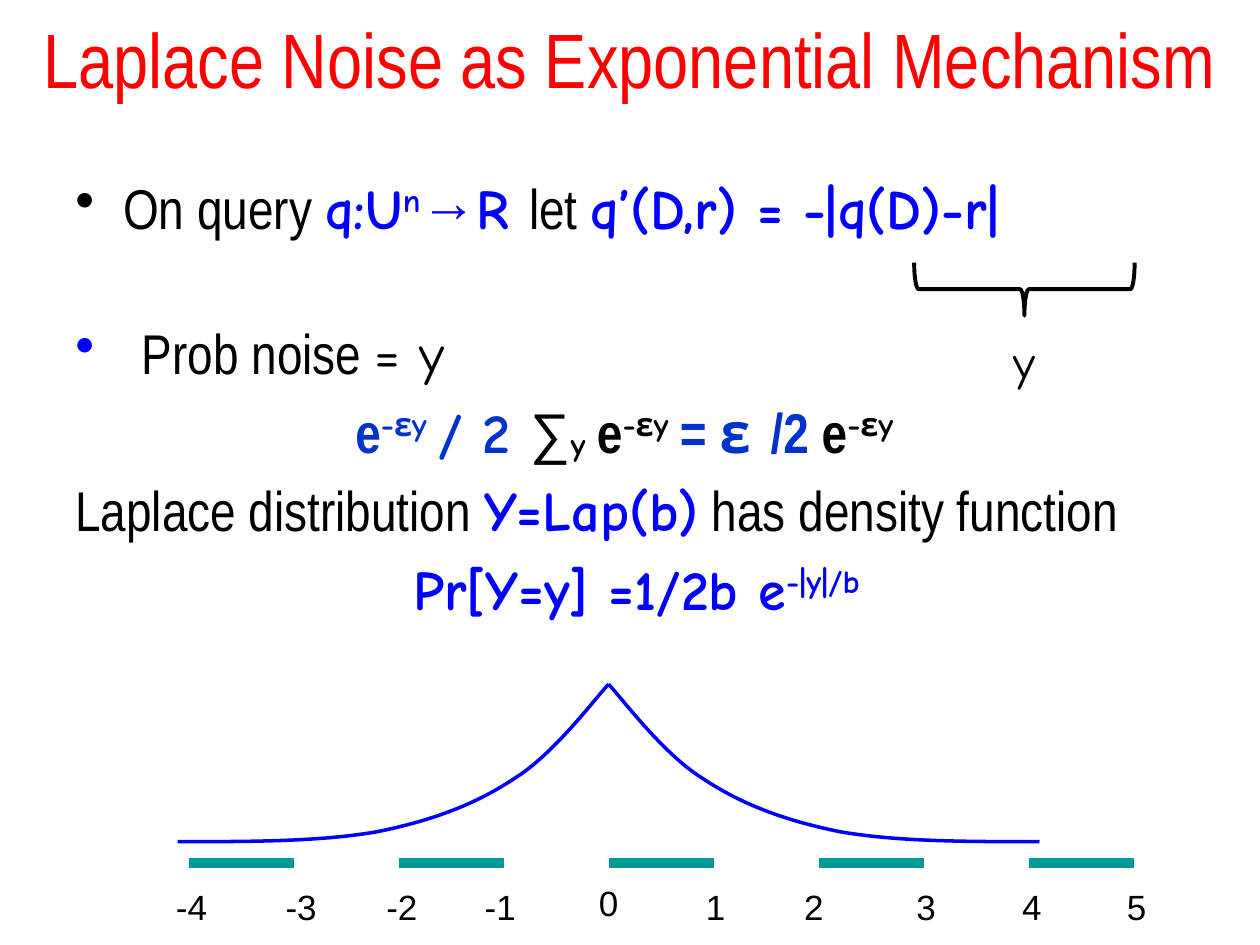
from pptx import Presentation
from pptx.dml.color import RGBColor
from pptx.enum.shapes import MSO_CONNECTOR, MSO_SHAPE
from pptx.enum.text import MSO_ANCHOR, PP_ALIGN
from pptx.oxml.ns import qn
from pptx.util import Inches, Pt
from lxml import etree

CENTER, LEFT = PP_ALIGN.CENTER, PP_ALIGN.LEFT
TOP, MIDDLE = MSO_ANCHOR.TOP, MSO_ANCHOR.MIDDLE
STRAIGHT = MSO_CONNECTOR.STRAIGHT
RIGHT_BRACE = MSO_SHAPE.RIGHT_BRACE

COLORS = {"red": "FF0000", "blue": "0000FF", "navy": "0033CC",
          "teal": "009999", "black": "000000"}
NARROW, COMIC, SANS = "Arial Narrow", "Comic Neue", "Arial"


def span(text, font=NARROW, color="black", size=32, bold=False, base=0):
    """Return the text together with its format."""
    return text, font, color, size, bold, base


class SlideBuilder:
    """Holds the style and the current slide."""

    def __init__(self, deck):
        self.slide = deck.slides.add_slide(deck.slide_layouts[6])
        self.shapes = self.slide.shapes

    def color(self, name):
        return RGBColor.from_string(COLORS[name])

    def outline(self, shape, color, width):
        shape.line.color.rgb = self.color(color)
        shape.line.width = Pt(width)

    def text_box(self, left, top, width, height, wrap=True, anchor=TOP):
        box = self.shapes.add_textbox(
            Inches(left), Inches(top), Inches(width), Inches(height))
        box.text_frame.word_wrap = wrap
        box.text_frame.vertical_anchor = anchor
        return box.text_frame

    def fill_para(self, para, spans, align=LEFT, before=0, hanging=False, bullet=False):
        para.alignment = align
        para.space_before = Pt(before)
        properties = para._p.get_or_add_pPr()
        if hanging:
            properties.set("marL", str(Inches(0.38)))
            properties.set("indent", str(-Inches(0.38)))
        if bullet:
            etree.SubElement(properties, qn("a:buChar")).set("char", "•")
        for text, font, color, size, bold, base in spans:
            run = para.add_run()
            run.text = text
            run.font.name = font
            run.font.size = Pt(size)
            run.font.bold = bold
            run.font.color.rgb = self.color(color)
            if base:
                run.font._element.set("baseline", str(base * 1000))

    def label(self, center, top, height, piece, width=0.48):
        frame = self.text_box(center - width / 2, top, width, height, wrap=False)
        self.fill_para(frame.paragraphs[0], [piece], CENTER)

    def brace(self, left, top, width, height):
        shape = self.shapes.add_shape(
            RIGHT_BRACE, Inches(left), Inches(top), Inches(width), Inches(height))
        shape.rotation = 90
        shape.shadow.inherit = False
        shape.fill.background()
        self.outline(shape, "black", 2.25)

    def curve(self, points):
        """Draw cubic curves through a start point and triples of control points."""
        points = [(Inches(x), Inches(y)) for x, y in points]
        builder = self.shapes.build_freeform(*points[0])
        builder.add_line_segments(points[1:], close=False)
        shape = builder.convert_to_shape()
        shape.shadow.inherit = False
        shape.fill.background()
        self.outline(shape, "blue", 2)
        outline = next(shape._element.iter(qn("a:path")))
        segments = outline.findall(qn("a:lnTo"))
        for first in range(0, len(segments), 3):
            bezier = etree.SubElement(outline, qn("a:cubicBezTo"))
            for segment in segments[first:first + 3]:
                bezier.append(segment[0])
                outline.remove(segment)

    def bar(self, left, right, y):
        line = self.shapes.add_connector(
            STRAIGHT, Inches(left), Inches(y), Inches(right), Inches(y))
        self.outline(line, "teal", 6)
        etree.SubElement(line._element.spPr, qn("a:effectLst"))


def blue(text, **style):
    return span(text, COMIC, "blue", bold=True, **style)


def power(color):
    return [span("e", color=color, bold=True),
            span("-εy ", COMIC, color, bold=True, base=30)]


def main():
    deck = Presentation()
    deck.slide_width, deck.slide_height = Inches(10), Inches(7.5)
    page = SlideBuilder(deck)

    title = page.text_box(0, -0.17, 10, 1.25, anchor=MIDDLE)
    page.fill_para(title.paragraphs[0],
                   [span("Laplace Noise as Exponential Mechanism", color="red", size=44)],
                   CENTER)

    query = [span("On query "), blue("q:U"), blue("n", base=30),
             span("→", color="blue", bold=True), blue("R "), span("let "),
             blue("q’(D,r) = -|q(D)-r|")]
    noise = [span(" ", COMIC, "blue"), span("Prob noise "), span("= y", COMIC)]
    ratio = [*power("navy"), span("/ 2 ", COMIC, "navy", bold=True), span("∑"),
             span("y ", COMIC, bold=True, base=-5), *power("black"),
             span("= ", color="navy", bold=True),
             span("ε ", COMIC, "navy", bold=True),
             span("/2 ", color="navy", bold=True), *power("black")]
    laplace = [span("Laplace distribution "), blue("Y=Lap(b)"),
               span(" has density function")]
    density = [span(" "), blue("Pr[Y=y] =1/2b e"), blue("-|y|/b", base=30)]

    body = page.text_box(0.5, 1.33, 9, 4.95)
    rows = [(query, LEFT, 6.4, True), (noise, LEFT, 44.5, True),
            (ratio, CENTER, 6.4, False), (laplace, LEFT, 6.4, False),
            (density, CENTER, 6.4, False)]
    for index, (spans, align, before, bullet) in enumerate(rows):
        para = body.add_paragraph() if index else body.paragraphs[0]
        page.fill_para(para, spans, align, before, hanging=True, bullet=bullet)

    page.brace(7.92, 1.42, 0.42, 1.75)
    page.label(8.13, 2.58, 0.57, span("y", COMIC, size=28))

    peak = 4.83
    half = [(3.42, 6.68), (2.85, 6.68), (2.28, 6.68), (1.83, 6.6), (1.39, 6.51),
            (1.05, 6.38), (0.75, 6.18), (0.44, 5.99), (0.12, 5.56), (0, 5.43)]
    for side in (-1, 1):
        page.curve([(peak + side * x, y) for x, y in half])

    step = 5 / 6
    for index in range(0, 10, 2):
        left = 1.5 + index * step
        page.bar(left, left + step, 6.85)

    centers = [1.52, 2.39, 3.19, 3.97, 4.83, 5.68, 6.46, 7.35, 8.19, 9.02]
    for value, center in enumerate(centers, start=-4):
        page.label(center, 6.98 if value else 6.95, 0.43,
                   span(str(value), SANS, size=20))

    deck.save("out.pptx")


if __name__ == "__main__":
    main()
